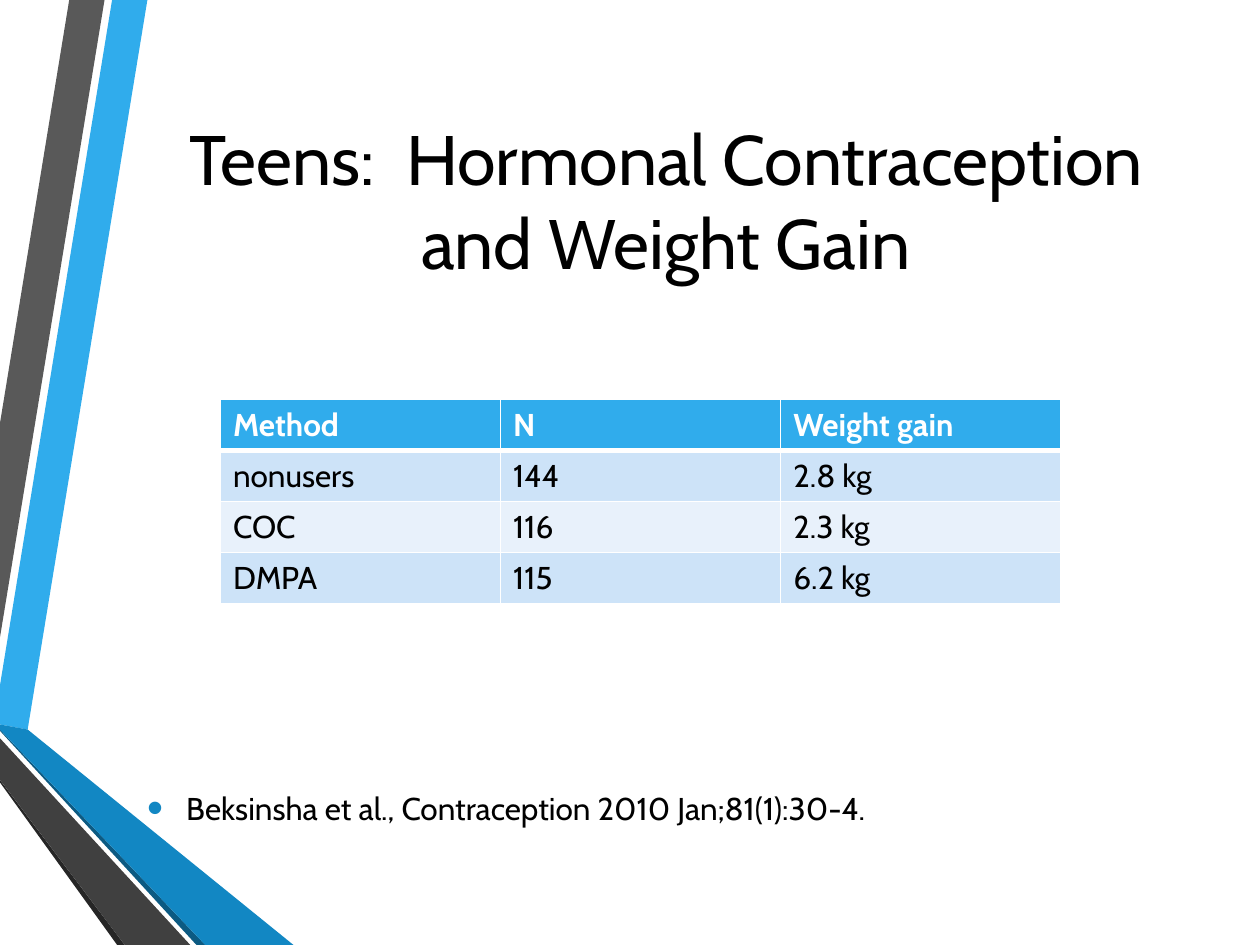
from lxml import etree
from pptx import Presentation
from pptx.dml.color import RGBColor
from pptx.enum.text import MSO_ANCHOR, PP_ALIGN
from pptx.oxml.ns import qn
from pptx.util import Inches, Pt

MIDDLE, BOTTOM = MSO_ANCHOR.MIDDLE, MSO_ANCHOR.BOTTOM
CENTER = PP_ALIGN.CENTER

FONT = "Cabin"
BLACK = RGBColor(0x00, 0x00, 0x00)
WHITE = RGBColor(0xFF, 0xFF, 0xFF)
SKY = RGBColor(0x30, 0xAC, 0xEC)
BLUE = RGBColor(0x12, 0x87, 0xC3)
NAVY = RGBColor(0x0C, 0x5A, 0x82)
GRAY = RGBColor(0x59, 0x59, 0x59)
CHARCOAL = RGBColor(0x40, 0x40, 0x40)
SOOT = RGBColor(0x26, 0x26, 0x26)
BAND_DARK = RGBColor(0xCD, 0xE3, 0xF8)
BAND_LIGHT = RGBColor(0xE8, 0xF1, 0xFB)

TITLE = "Teens:  Hormonal Contraception and Weight Gain"
CITATION = "Beksinsha et al., Contraception 2010 Jan;81(1):30-4."
ROWS = [
    ("Method", "N", "Weight gain"),
    ("nonusers", "144", "2.8 kg"),
    ("COC", "116", "2.3 kg"),
    ("DMPA", "115", "6.2 kg"),
]
RIBBONS = [
    (SKY, [(0, 5.44), (0, 5.75), (0.22, 5.79), (1.17, 0), (0.89, 0)]),
    (GRAY, [(0.83, 0), (0.55, 0), (0, 3.36), (0, 5.06)]),
    (SOOT, [(0, 6.19), (0, 6.21), (0.93, 7.5), (0.99, 7.5)]),
    (NAVY, [(0, 5.79), (0, 5.8), (1.56, 7.5), (1.63, 7.5)]),
    (BLUE, [(0, 5.79), (1.63, 7.5), (2.33, 7.5), (0.22, 5.79), (0, 5.75)]),
    (CHARCOAL, [(0, 6.19), (0.99, 7.5), (1.51, 7.5), (0, 5.86)]),
]
TEXT_LEFT, TEXT_WIDTH = 1.07, 8.43
INDENT = 0.31
ROW_HEIGHT = 0.405


def write(p, text, size, color, bold=False):
    r = p.add_run()
    r.text = text
    for name, value in {"name": FONT, "size": Pt(size), "bold": bold}.items():
        setattr(r.font, name, value)
    r.font.color.rgb = color


def add_ribbon(s, color, points):
    points = [(Inches(x), Inches(y)) for x, y in points]
    builder = s.shapes.build_freeform(*points[0], scale=1.0)
    builder.add_line_segments(points[1:], close=True)
    sp = builder.convert_to_shape()
    sp.shadow.inherit = False
    sp.fill.solid()
    sp.fill.fore_color.rgb = color
    sp.line.fill.background()


def add_bullet(p):
    pPr = p._p.get_or_add_pPr()
    pPr.set("marL", str(Inches(INDENT)))
    pPr.set("indent", str(-Inches(INDENT)))
    color = etree.SubElement(pPr, qn("a:buClr"))
    etree.SubElement(color, qn("a:srgbClr"), val=str(BLUE))
    etree.SubElement(pPr, qn("a:buSzPct"), val="145000")
    etree.SubElement(pPr, qn("a:buFont"), typeface="Arial")
    etree.SubElement(pPr, qn("a:buChar"), char="•")


def add_borders(cell, widths):
    tcPr = cell._tc.get_or_add_tcPr()
    for side, width in widths.items():
        ln = etree.SubElement(tcPr, qn("a:ln" + side), w=str(Pt(width)))
        fill = etree.SubElement(ln, qn("a:solidFill"))
        etree.SubElement(fill, qn("a:srgbClr"), val=str(WHITE))


def add_results(s):
    table = s.shapes.add_table(
        len(ROWS), len(ROWS[0]), Inches(1.75), Inches(3.17),
        Inches(6.67), Inches(ROW_HEIGHT * len(ROWS))).table
    for i, row in enumerate(ROWS):
        header = i == 0
        band = SKY if header else (BAND_LIGHT, BAND_DARK)[i % 2]
        widths = {"L": 1, "R": 1, "T": 3 if i == 1 else 1, "B": 3 if header else 1}
        for j, text in enumerate(row):
            cell = table.cell(i, j)
            add_borders(cell, widths)
            cell.fill.solid()
            cell.fill.fore_color.rgb = band
            write(cell.text_frame.paragraphs[0], text, 18,
                  WHITE if header else BLACK, header)


def main():
    prs = Presentation()
    prs.slide_width, prs.slide_height = Inches(10), Inches(7.5)
    s = prs.slides.add_slide(prs.slide_layouts[5])

    for color, points in RIBBONS:
        add_ribbon(s, color, points)

    title = s.shapes.title
    title.left, title.top = Inches(TEXT_LEFT), Inches(0.5)
    title.width, title.height = Inches(TEXT_WIDTH), Inches(2.17)
    tf = title.text_frame
    tf.word_wrap = True
    tf.vertical_anchor = MIDDLE
    p = tf.paragraphs[0]
    p.alignment = CENTER
    write(p, TITLE, 40, BLACK)

    citation = s.shapes.add_textbox(
        Inches(TEXT_LEFT), Inches(2.92), Inches(TEXT_WIDTH), Inches(3.64))
    tf = citation.text_frame
    tf.word_wrap = True
    tf.vertical_anchor = BOTTOM
    tf.margin_bottom = 0
    p = tf.paragraphs[0]
    add_bullet(p)
    write(p, CITATION, 18, BLACK)

    add_results(s)
    prs.save("out.pptx")


if __name__ == "__main__":
    main()
